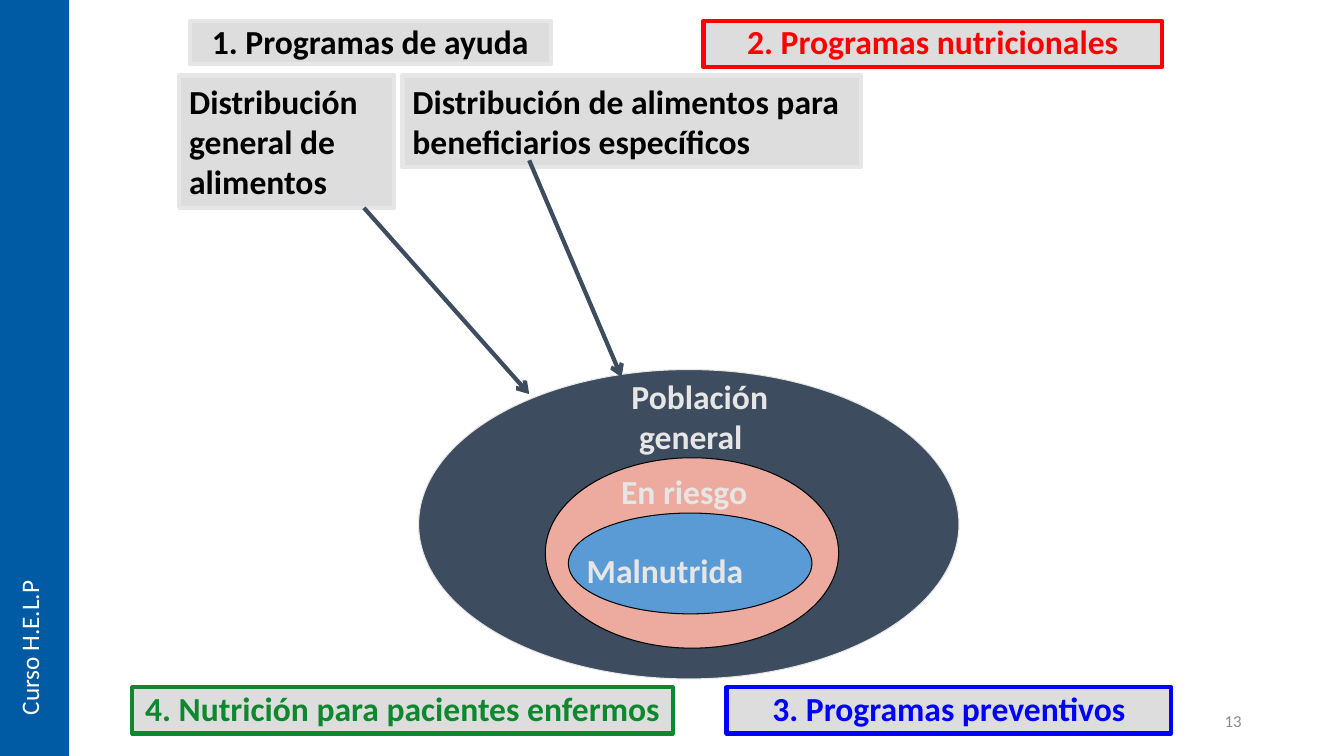
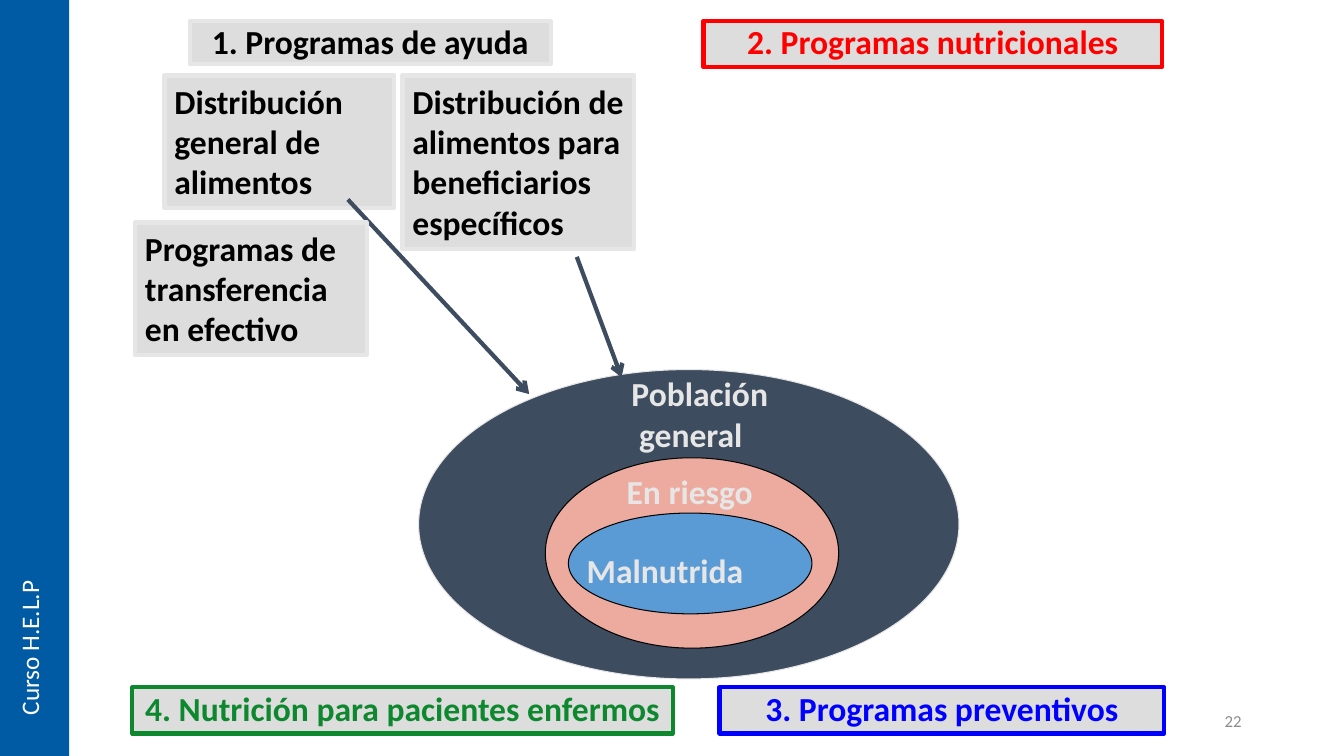
"""Build two slides that relate food programmes to nested population groups."""
import dataclasses

import lxml.etree
import pptx
import pptx.dml.color
import pptx.enum.shapes
import pptx.enum.text
import pptx.oxml.ns
import pptx.util

Pt = pptx.util.Pt
SHAPE = pptx.enum.shapes.MSO_SHAPE
ALIGN = pptx.enum.text.PP_ALIGN
ANCHOR = pptx.enum.text.MSO_ANCHOR
qn = pptx.oxml.ns.qn


@dataclasses.dataclass(frozen=True)
class Theme:
    """Shared colours, font and sizes."""
    font: str = "Calibri"
    body: int = 24
    side: int = 18
    number: int = 12
    border: int = 3
    outline: float = 0.75
    band: str = "005BA4"
    panel: str = "DDDDDD"
    pale: str = "E7E6E6"
    slate: str = "3D4C5F"
    salmon: str = "ECAB9E"
    sky: str = "5B9BD5"
    black: str = "000000"
    white: str = "FFFFFF"
    red: str = "FF0000"
    green: str = "0E882E"
    blue: str = "0000FF"
    grey: str = "8C8C8C"


THEME = Theme()
rgb = pptx.dml.color.RGBColor.from_string


def add_part(slide, text, box, kind=None, fill=None, line=None, weight=THEME.border,
             color=THEME.black, size=THEME.body, bold=True, align=ALIGN.LEFT,
             anchor=ANCHOR.TOP, spacing=1.0, wrap=True, vert=None):
    """Add a text box, or a preset shape when kind is given, with its text."""
    lengths = [Pt(value) for value in box]
    if kind is None:
        part = slide.shapes.add_textbox(*lengths)
    else:
        part = slide.shapes.add_shape(kind, *lengths)
        part.shadow.inherit = False
        part.fill.solid()
        part.fill.fore_color.rgb = rgb(fill)
        if line:
            part.line.color.rgb = rgb(line)
            part.line.width = Pt(weight)
        else:
            part.line.fill.background()
    frame = part.text_frame
    frame.word_wrap = wrap
    frame.vertical_anchor = anchor
    if vert:
        frame._txBody.bodyPr.set("vert", vert)
    frame.text = text
    for paragraph in frame.paragraphs:
        paragraph.alignment = align
        paragraph.line_spacing = spacing
        paragraph.font.name = THEME.font
        paragraph.font.size = Pt(size)
        paragraph.font.bold = bold
        paragraph.font.color.rgb = rgb(color)


def add_arrow(slide, start, end):
    """Add a slate arrow between two points."""
    arrow = slide.shapes.add_connector(
        pptx.enum.shapes.MSO_CONNECTOR.STRAIGHT, *[Pt(value) for value in start + end])
    arrow.line.color.rgb = rgb(THEME.slate)
    arrow.line.width = Pt(THEME.border)
    lengths = arrow.line._get_or_add_ln()
    lxml.etree.SubElement(lengths, qn("a:tailEnd"), type="arrow")
    lxml.etree.SubElement(arrow._element.spPr, qn("a:effectLst"))


general_food = "Distribución general de alimentos"
targeted_food = "Distribución de alimentos para beneficiarios específicos"
cash_transfer = "Programas de transferencia en efectivo"
general_tip, targeted_tip = (378, 281.5), (444, 269.5)

populations = [
    ((299, 264, 386, 221), THEME.slate, THEME.pale),
    ((389.5, 327, 209.5, 136), THEME.salmon, THEME.black),
    ((406, 366.5, 174, 72), THEME.sky, THEME.black),
]

pages = [
    dict(number="13", general_top=265, risk_left=436.5, prevention_left=519,
         aid=[(general_food, (128, 54, 153.5, 94.5), (260, 148.5), general_tip),
              (targeted_food, (287.5, 54, 327.5, 65.5), (378, 114.5), targeted_tip)]),
    dict(number="22", general_top=263, risk_left=440.5, prevention_left=514,
         aid=[(general_food, (117.5, 54, 164, 94.5), (248.5, 142.5), general_tip),
              (targeted_food, (287.5, 54, 165.5, 124), (412, 183.5), targeted_tip),
              (cash_transfer, (96.5, 159, 165.5, 94.5), None, None)]),
]

deck = pptx.Presentation()
deck.slide_width, deck.slide_height = Pt(960), Pt(540)

for page in pages:
    slide = deck.slides.add_slide(deck.slide_layouts[6])

    for box, fill, line in populations:
        add_part(slide, "", box, SHAPE.OVAL, fill, line, THEME.outline)
    for text, box in [
        ("Población\n general", (444, page["general_top"], 136, 65.5)),
        ("En riesgo", (page["risk_left"], 332.5, 140, 36)),
        ("Malnutrida", (412, 389, 166, 36)),
    ]:
        add_part(slide, text, box, color=THEME.pale)

    for text, box, line, color in [
        ("2. Programas nutricionales", (502.5, 15, 327.5, 33), THEME.red, THEME.red),
        ("1. Programas de ayuda", (135.5, 15, 258, 31), THEME.pale, THEME.black),
        ("4. Nutrición para pacientes enfermos", (94.5, 491, 386, 33),
         THEME.green, THEME.green),
        ("3. Programas preventivos", (page["prevention_left"], 491, 317.5, 33),
         THEME.blue, THEME.blue),
    ]:
        add_part(slide, text, box, SHAPE.RECTANGLE, THEME.panel, line,
                 color=color, align=ALIGN.CENTER, spacing=0.9)

    for text, box, start, tip in page["aid"]:
        add_part(slide, text, box, SHAPE.RECTANGLE, THEME.panel, THEME.pale)
        if start:
            add_arrow(slide, start, tip)

    add_part(slide, "", (0, 0, 49.5, 540), SHAPE.RECTANGLE, THEME.band)
    add_part(slide, "Curso H.E.L.P", (6.5, 404, 36, 114), color=THEME.white,
             size=THEME.side, bold=False, wrap=False, vert="vert270")
    add_part(slide, page["number"], (678, 500.5, 216, 29), color=THEME.grey,
             size=THEME.number, bold=False, align=ALIGN.RIGHT, anchor=ANCHOR.MIDDLE)

deck.save("out.pptx")
